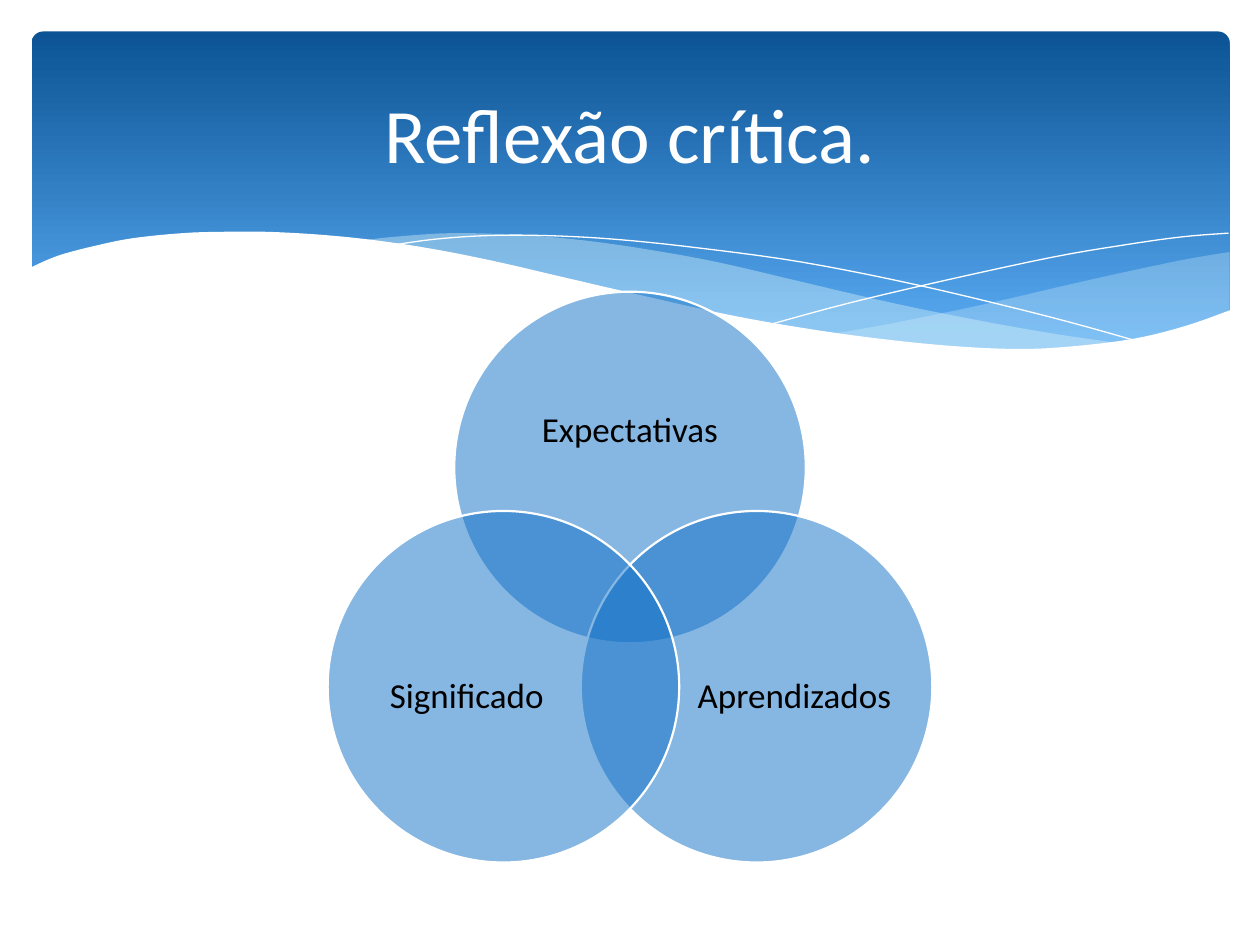
from dataclasses import dataclass
from math import cos, radians, sin

from lxml.etree import SubElement
from pptx import Presentation
from pptx.dml.color import RGBColor
from pptx.enum.shapes import MSO_SHAPE
from pptx.enum.text import MSO_ANCHOR, PP_ALIGN
from pptx.oxml.ns import qn
from pptx.util import Inches, Pt


@dataclass(frozen=True)
class Theme:
    font: str = "Calibri"
    title_size: int = 44
    label_size: int = 20
    white: RGBColor = RGBColor(0xFF, 0xFF, 0xFF)
    black: RGBColor = RGBColor(0x00, 0x00, 0x00)
    banner_top: RGBColor = RGBColor(0x0B, 0x53, 0x94)
    banner_bottom: RGBColor = RGBColor(0x59, 0xAA, 0xF2)
    mist: RGBColor = RGBColor(0xDB, 0xF5, 0xF9)
    circle: RGBColor = RGBColor(0x0F, 0x6F, 0xC6)


def paint(shape, color, opacity=100):
    """Fill a shape with one colour, opacity in percent, and drop its shadow."""
    shape.shadow.inherit = False
    shape.fill.solid()
    shape.fill.fore_color.rgb = color
    if opacity < 100:
        solid = shape.fill._xPr.find(qn("a:solidFill"))
        SubElement(solid[0], qn("a:alpha"), val=str(opacity * 1000))


def smooth(knots, steps=5):
    """Return points on a Catmull-Rom curve through the knots."""
    padded = [knots[0], *knots, knots[-1]]
    points = [knots[0]]
    for before, start, end, after in zip(padded, padded[1:], padded[2:], padded[3:]):
        for step in range(1, steps + 1):
            t = step / steps
            points.append(tuple(
                (2 * b + (c - a) * t + (2 * a - 5 * b + 4 * c - d) * t**2
                 + (3 * b - a - 3 * c + d) * t**3) / 2
                for a, b, c, d in zip(before, start, end, after)))
    return points


theme = Theme()
deck = Presentation()
deck.slide_width, deck.slide_height = Inches(10), Inches(7.5)
page = deck.slides.add_slide(deck.slide_layouts[6])
shapes = page.shapes

banner = shapes.add_shape(MSO_SHAPE.ROUNDED_RECTANGLE,
                          Inches(0.25), Inches(0.25), Inches(9.51), Inches(2.7))
banner.adjustments[0] = 0.034
banner.shadow.inherit = False
banner.line.fill.background()
banner.fill.gradient()
banner.fill.gradient_angle = 270
banner_colors = ((0, theme.banner_top), (0.9, theme.banner_bottom))
for stop, (position, color) in zip(banner.fill.gradient_stops, banner_colors):
    stop.position = position
    stop.color.rgb = color

# Each wave is a list of edges; each edge is smoothed through its knots.
right_wave = [
    [(9.76, 2), (9.35, 2.07), (8.61, 2.23), (7.79, 2.42), (7.06, 2.57), (6.61, 2.65)],
    [(6.61, 2.65), (7.05, 2.71), (7.57, 2.76), (8.03, 2.78), (8.54, 2.76),
     (8.97, 2.7), (9.35, 2.62), (9.76, 2.47)],
]
middle_wave = [
    [(8.93, 2.73), (8.37, 2.65), (7.75, 2.54), (7.06, 2.4), (6.29, 2.22), (5.69, 2.08),
     (5.14, 1.98), (4.65, 1.91), (4.2, 1.87), (3.61, 1.85), (3.13, 1.88), (2.86, 1.91)],
    [(2.86, 1.91), (3.42, 1.99), (4.04, 2.11), (4.49, 2.22), (5.3, 2.4), (6.01, 2.55),
     (6.65, 2.66), (7.22, 2.74), (7.73, 2.77), (8.18, 2.78), (8.57, 2.77), (8.93, 2.73)],
]
falling_line = [
    [(3.09, 1.95), (3.44, 1.9), (3.87, 1.87), (4.33, 1.87), (4.89, 1.9), (5.56, 1.97),
     (6.36, 2.08), (7.27, 2.26), (8.31, 2.51), (9.07, 2.72)],
]
rising_line = [
    [(6.13, 2.57), (6.72, 2.41), (7.48, 2.23), (8.36, 2.04), (8.95, 1.94),
     (9.38, 1.88), (9.75, 1.85)],
]
white_wave = [
    [(9.77, 2.46), (9.4, 2.59), (8.99, 2.69), (8.5, 2.75), (8.09, 2.77), (7.61, 2.75),
     (7.08, 2.7), (6.48, 2.62), (5.79, 2.5), (5.03, 2.33), (4.47, 2.2), (3.91, 2.07),
     (3.4, 1.97), (2.92, 1.9), (2.5, 1.86), (2.11, 1.84), (1.77, 1.84), (1.46, 1.85),
     (1.06, 1.89), (0.76, 1.95), (0.46, 2.03), (0.23, 2.13)],
    [(0.23, 3.29), (9.77, 3.29)],
]
waves = [
    (right_wave, theme.mist, 29),
    (middle_wave, theme.mist, 40),
    (falling_line, None, None),
    (rising_line, None, None),
    (white_wave, theme.white, 100),
]
for edges, color, opacity in waves:
    outline = [(Inches(x), Inches(y)) for edge in edges for x, y in smooth(edge)]
    builder = shapes.build_freeform(*outline[0])
    builder.add_line_segments(outline[1:], close=color is not None)
    wave = builder.convert_to_shape()
    if color is None:
        wave.shadow.inherit = False
        wave.fill.background()
        wave.line.color.rgb = theme.white
        wave.line.width = Pt(0)
    else:
        paint(wave, color, opacity)
        wave.line.fill.background()

# Circle centres sit at equal angles around the middle of the diagram.
center_x, center_y, orbit, radius = 5, 4.87, 1.16, 1.395
circles = [
    ("Expectativas", -90, (3.98, 2.8, 2.04, 1.25)),
    ("Aprendizados", 30, (5.47, 4.77, 1.67, 1.53)),
    ("Significado", 150, (2.87, 4.77, 1.67, 1.53)),
]
texts = []
for label, angle, frame in circles:
    left = center_x + orbit * cos(radians(angle)) - radius
    top = center_y + orbit * sin(radians(angle)) - radius
    circle = shapes.add_shape(MSO_SHAPE.OVAL, Inches(left), Inches(top),
                              Inches(2 * radius), Inches(2 * radius))
    paint(circle, theme.circle, 50)
    circle.line.color.rgb = theme.white
    circle.line.width = Pt(1.25)
    box = shapes.add_textbox(*map(Inches, frame))
    text = box.text_frame
    text.margin_left = text.margin_right = text.margin_top = text.margin_bottom = 0
    text.paragraphs[0].line_spacing = 0.9
    text.paragraphs[0].space_after = Pt(7)
    texts.append((text, label, theme.label_size, theme.black))

title = shapes.add_textbox(Inches(0.5), Inches(0.37), Inches(9), Inches(1.37))
texts.append((title.text_frame, "Reflexão crítica.", theme.title_size, theme.white))

for text, wording, size, color in texts:
    text.word_wrap = True
    text.vertical_anchor = MSO_ANCHOR.MIDDLE
    para = text.paragraphs[0]
    para.text = wording
    para.alignment = PP_ALIGN.CENTER
    para.font.name = theme.font
    para.font.size = Pt(size)
    para.font.color.rgb = color

deck.save("out.pptx")
